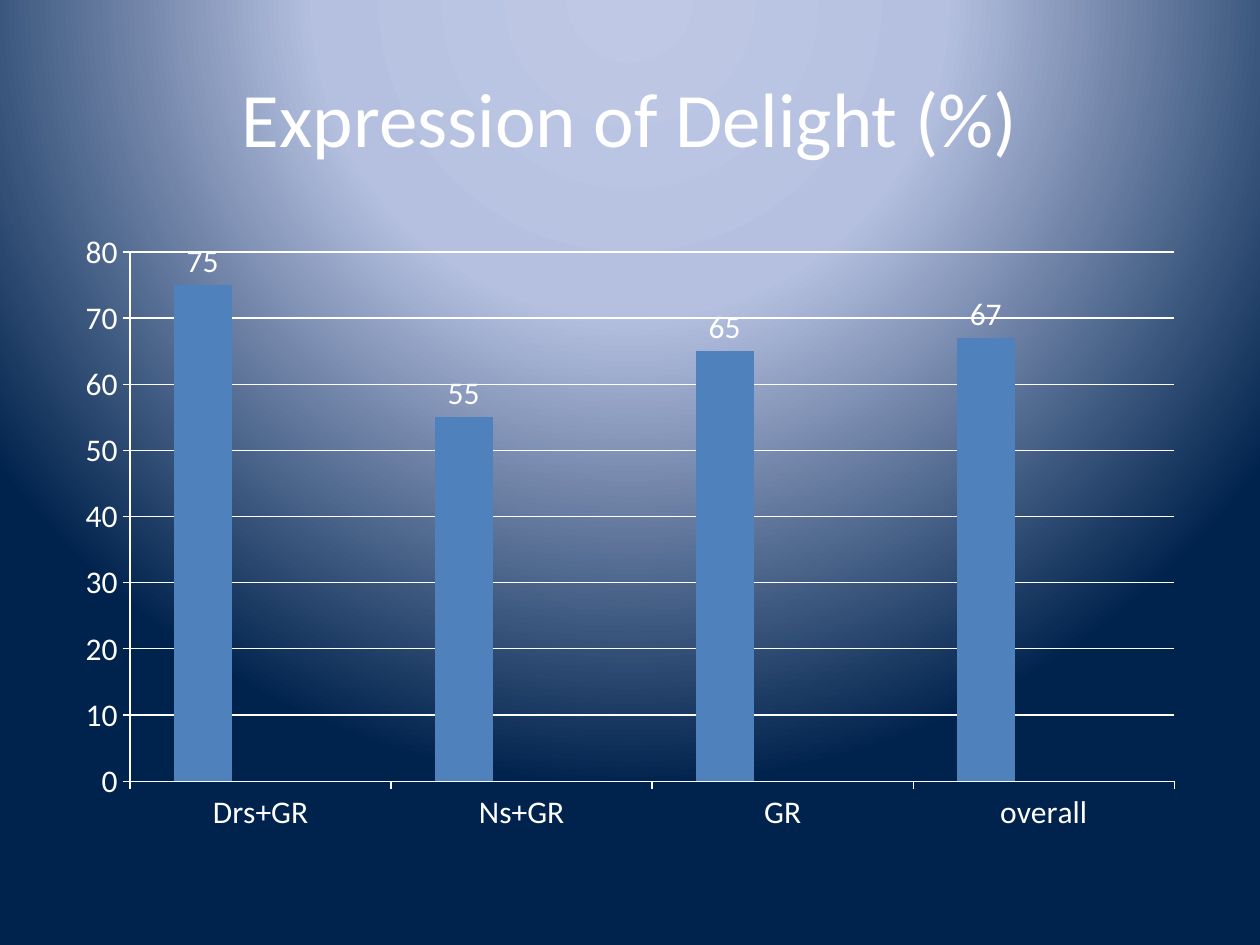
"""Build the slide charting the expression of delight by group."""
from dataclasses import dataclass
from typing import Any, Optional

from lxml.etree import SubElement
from pptx import Presentation
from pptx.chart.data import CategoryChartData
from pptx.dml.color import RGBColor
from pptx.enum.chart import XL_CHART_TYPE, XL_LABEL_POSITION, XL_TICK_MARK
from pptx.enum.text import MSO_ANCHOR, PP_ALIGN
from pptx.oxml.ns import qn
from pptx.util import Inches, Pt

WHITE = "FFFFFF"
GROUPS = ("Drs+GR", "Ns+GR", "GR", "overall")


@dataclass(frozen=True)
class Measure:
    name: str
    values: tuple[Optional[int], ...]
    color: str


@dataclass(frozen=True)
class Stop:
    percent: int
    color: str


MEASURES = (
    Measure("Series 1", (75, 55, 65, 67), "4F81BD"),
    Measure("Series 2", (None,) * len(GROUPS), "C0504D"),
    Measure("Series 3", (None,) * len(GROUPS), "9BBB59"),
)
GLOW = (Stop(0, "BFC9E5"), Stop(40, "B5C0E0"), Stop(100, "00234D"))
GLOW_CENTER = {"l": 50, "t": -80, "r": 50, "b": 180}


def paint(color_format: Any, color: str) -> None:
    color_format.rgb = RGBColor.from_string(color)


def apply(target: Any, formats: dict[str, Any]) -> None:
    for attribute, value in formats.items():
        setattr(target, attribute, value)


def style_font(font: Any, size: int) -> None:
    apply(font, {"name": "Calibri", "size": Pt(size)})
    paint(font.color, WHITE)


def style_line(line: Any) -> None:
    line.width = Pt(0.75)
    paint(line_fill(line), WHITE)


def line_fill(line: Any) -> Any:
    line.fill.solid()
    return line.fill.fore_color


def paint_glow(slide: Any) -> None:
    slide.background.fill.gradient()
    gradient = slide.element.find(f".//{qn('a:gradFill')}")
    for child in list(gradient):
        gradient.remove(child)
    stops = SubElement(gradient, qn("a:gsLst"))
    for stop in GLOW:
        position = SubElement(stops, qn("a:gs"), pos=str(stop.percent * 1000))
        SubElement(position, qn("a:srgbClr"), val=stop.color)
    circle = SubElement(gradient, qn("a:path"), path="circle")
    edges = {edge: str(percent * 1000) for edge, percent in GLOW_CENTER.items()}
    SubElement(circle, qn("a:fillToRect"), edges)


def write_title(slide: Any, wording: str) -> None:
    title = slide.shapes.title
    apply(title, {"left": Inches(0.5), "top": Inches(0.3),
                  "width": Inches(9), "height": Inches(1.25)})
    frame = title.text_frame
    apply(frame, {"text": wording, "vertical_anchor": MSO_ANCHOR.MIDDLE})
    heading = frame.paragraphs[0]
    heading.alignment = PP_ALIGN.CENTER
    style_font(heading.runs[0].font, 44)


def draw_chart(slide: Any) -> None:
    delight = CategoryChartData()
    delight.categories = GROUPS
    for measure in MEASURES:
        delight.add_series(measure.name, measure.values)
    chart = slide.shapes.add_chart(
        XL_CHART_TYPE.COLUMN_CLUSTERED,
        Inches(0.5), Inches(1.75), Inches(9), Inches(4.95), delight,
    ).chart
    apply(chart, {"has_legend": False, "has_title": False})
    style_font(chart.font, 18)

    bars = chart.plots[0]
    apply(bars, {"gap_width": 150, "overlap": 0, "vary_by_categories": False})
    for series, measure in zip(bars.series, MEASURES):
        series.format.fill.solid()
        paint(series.format.fill.fore_color, measure.color)
    labels = bars.series[0].data_labels
    apply(labels, {"show_value": True,
                   "position": XL_LABEL_POSITION.OUTSIDE_END})
    style_font(labels.font, 18)

    for axis in (chart.category_axis, chart.value_axis):
        apply(axis, {"major_tick_mark": XL_TICK_MARK.OUTSIDE,
                     "minor_tick_mark": XL_TICK_MARK.NONE})
        style_line(axis.format.line)
    apply(chart.value_axis, {"minimum_scale": 0, "maximum_scale": 80,
                             "major_unit": 10, "has_major_gridlines": True})
    style_line(chart.value_axis.major_gridlines.format.line)


def main() -> None:
    deck = Presentation()
    apply(deck, {"slide_width": Inches(10), "slide_height": Inches(7.5)})
    slide = deck.slides.add_slide(deck.slide_layouts.get_by_name("Title Only"))
    paint_glow(slide)
    write_title(slide, "Expression of Delight (%)")
    draw_chart(slide)
    deck.save("out.pptx")


if __name__ == "__main__":
    main()
